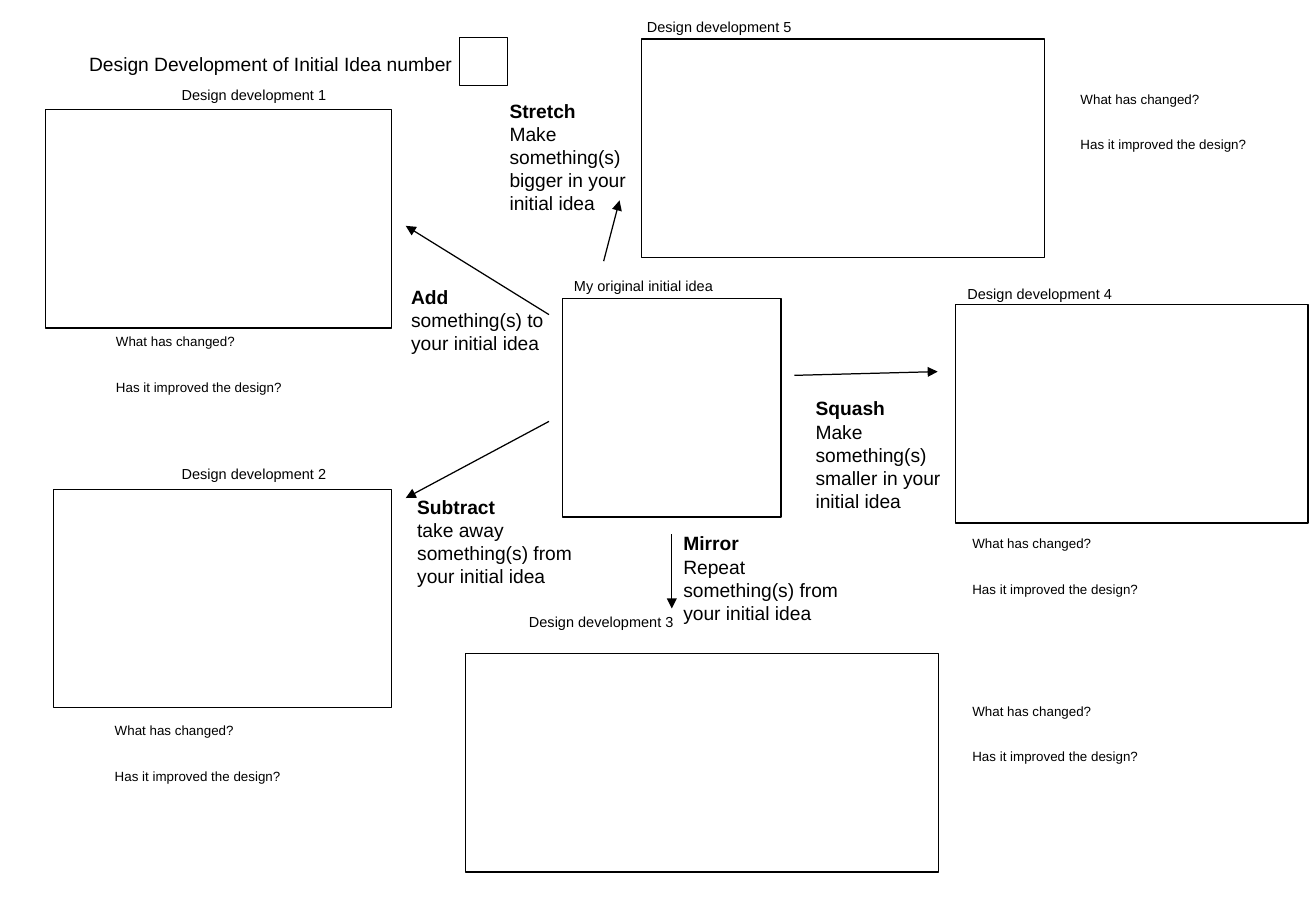
from typing import NamedTuple

from lxml.etree import SubElement
from pptx import Presentation
from pptx.dml.color import RGBColor
from pptx.enum.shapes import MSO_CONNECTOR as CONN, MSO_SHAPE as SHAPE
from pptx.oxml.ns import qn
from pptx.util import Pt

BLACK = RGBColor(0, 0, 0)
FONT = "Arial"
TITLE_SIZE, LABEL_SIZE, QUESTION_SIZE = 11.4, 8.6, 7.9
LINE_WIDTH = 0.75
FRAME_HEIGHT = 129.6
LABEL_WIDTH, LABEL_HEIGHT = 101.5, 18
QUESTION_WIDTH, QUESTION_HEIGHT = 146, 54.7
QUESTION_GAP = 17.6
QUESTIONS = "What has changed?\nHas it improved the design?"


class Point(NamedTuple):
    x: float
    y: float


class Box(NamedTuple):
    x: float
    y: float
    w: float
    h: float


class Action(NamedTuple):
    name: str
    advice: str
    box: Box
    one_paragraph: bool = False


class Development(NamedTuple):
    """One numbered idea: its frame, texts, and the arrow leading to it."""
    frame: Point
    width: float
    label: Point
    questions: Point
    start: Point
    end: Point
    action: Action


DEVELOPMENTS = [
    Development(Point(27, 64.9), 205, Point(100.8, 47.5), Point(61.9, 194.4),
                Point(325.4, 186.5), Point(240.5, 133.9),
                Action("Add ", "something(s) to your initial idea",
                       Box(236.9, 165.6, 93.6, 49), one_paragraph=True)),
    Development(Point(31.7, 290), 200.3, Point(100.8, 272.2), Point(61.2, 424.8),
                Point(325.4, 249.8), Point(240.5, 295.2),
                Action("Subtract", "take away something(s) from your initial idea",
                       Box(240.5, 290.2, 117.4, 62.6))),
    Development(Point(275.9, 387.3), 280.3, Point(306.7, 360), Point(569.5, 413.3),
                Point(398.2, 316.8), Point(398.2, 360.7),
                Action("Mirror", "Repeat something(s) from your initial idea",
                       Box(398.2, 311.8, 117.4, 62.6))),
    Development(Point(566.2, 180.5), 209.2, Point(566.6, 165.6), Point(569.5, 313.9),
                Point(470.9, 222.5), Point(555.8, 220.3),
                Action("Squash", "Make something(s) smaller in your initial idea",
                       Box(476.6, 231.8, 100.1, 76.3))),
    Development(Point(380.2, 23.1), 238.8, Point(376.6, 7.2), Point(633.6, 50.4),
                Point(357.8, 154.8), Point(367.2, 118.8),
                Action("Stretch", "Make something(s) bigger in your initial idea",
                       Box(295.2, 55.4, 100.1, 76.3))),
]


def add_frame(s, box: Box) -> None:
    sp = s.shapes.add_shape(SHAPE.RECTANGLE, *map(Pt, box))
    sp.shadow.inherit = False
    sp.fill.background()
    sp.line.color.rgb = BLACK
    sp.line.width = Pt(LINE_WIDTH)


def add_text(s, box: Box, text: str, size: float, gap: float = 0):
    """Add a wrapped text box with gap points between its paragraphs."""
    tf = s.shapes.add_textbox(*map(Pt, box)).text_frame
    tf.word_wrap = True
    tf.margin_left = tf.margin_right = Pt(6.8)
    tf.margin_top = tf.margin_bottom = Pt(3.4)
    tf.text = text
    for i, p in enumerate(tf.paragraphs):
        if i and gap:
            p.space_before = Pt(gap)
        for r in p.runs:
            style_run(r, size)
    return tf


def style_run(r, size: float, bold: bool = False) -> None:
    r.font.name = FONT
    r.font.size = Pt(size)
    r.font.bold = bold
    r.font.color.rgb = BLACK


def add_label(s, at: Point, text: str) -> None:
    add_text(s, Box(*at, LABEL_WIDTH, LABEL_HEIGHT), text, LABEL_SIZE)


def add_action(s, action: Action) -> None:
    tf = add_text(s, action.box, action.name, TITLE_SIZE)
    p = tf.paragraphs[0]
    p.runs[0].font.bold = True
    if not action.one_paragraph:
        p = tf.add_paragraph()
    r = p.add_run()
    r.text = action.advice
    style_run(r, TITLE_SIZE)


def add_arrow(s, start: Point, end: Point) -> None:
    line = s.shapes.add_connector(CONN.STRAIGHT, *map(Pt, start + end))
    line.line.color.rgb = BLACK
    line.line.width = Pt(LINE_WIDTH)
    SubElement(line.line._get_or_add_ln(), qn("a:tailEnd"), type="triangle")
    SubElement(line._element.spPr, qn("a:effectLst"))


def add_development(s, number: int, dev: Development) -> None:
    add_frame(s, Box(*dev.frame, dev.width, FRAME_HEIGHT))
    add_label(s, dev.label, f"Design development {number}")
    add_text(s, Box(*dev.questions, QUESTION_WIDTH, QUESTION_HEIGHT),
             QUESTIONS, QUESTION_SIZE, QUESTION_GAP)
    add_arrow(s, dev.start, dev.end)
    add_action(s, dev.action)


def main() -> None:
    prs = Presentation()
    prs.slide_width, prs.slide_height = Pt(780), Pt(540)
    s = prs.slides.add_slide(prs.slide_layouts[6])

    add_text(s, Box(46, 27.4, 494, 21),
             "Design Development of Initial Idea number", TITLE_SIZE)
    add_frame(s, Box(272.5, 22.3, 28.5, 28.5))
    add_frame(s, Box(333.4, 176.9, FRAME_HEIGHT, FRAME_HEIGHT))
    add_label(s, Point(333.4, 160.6), "My original initial idea")
    for number, dev in enumerate(DEVELOPMENTS, 1):
        add_development(s, number, dev)

    prs.save("out.pptx")


if __name__ == "__main__":
    main()
